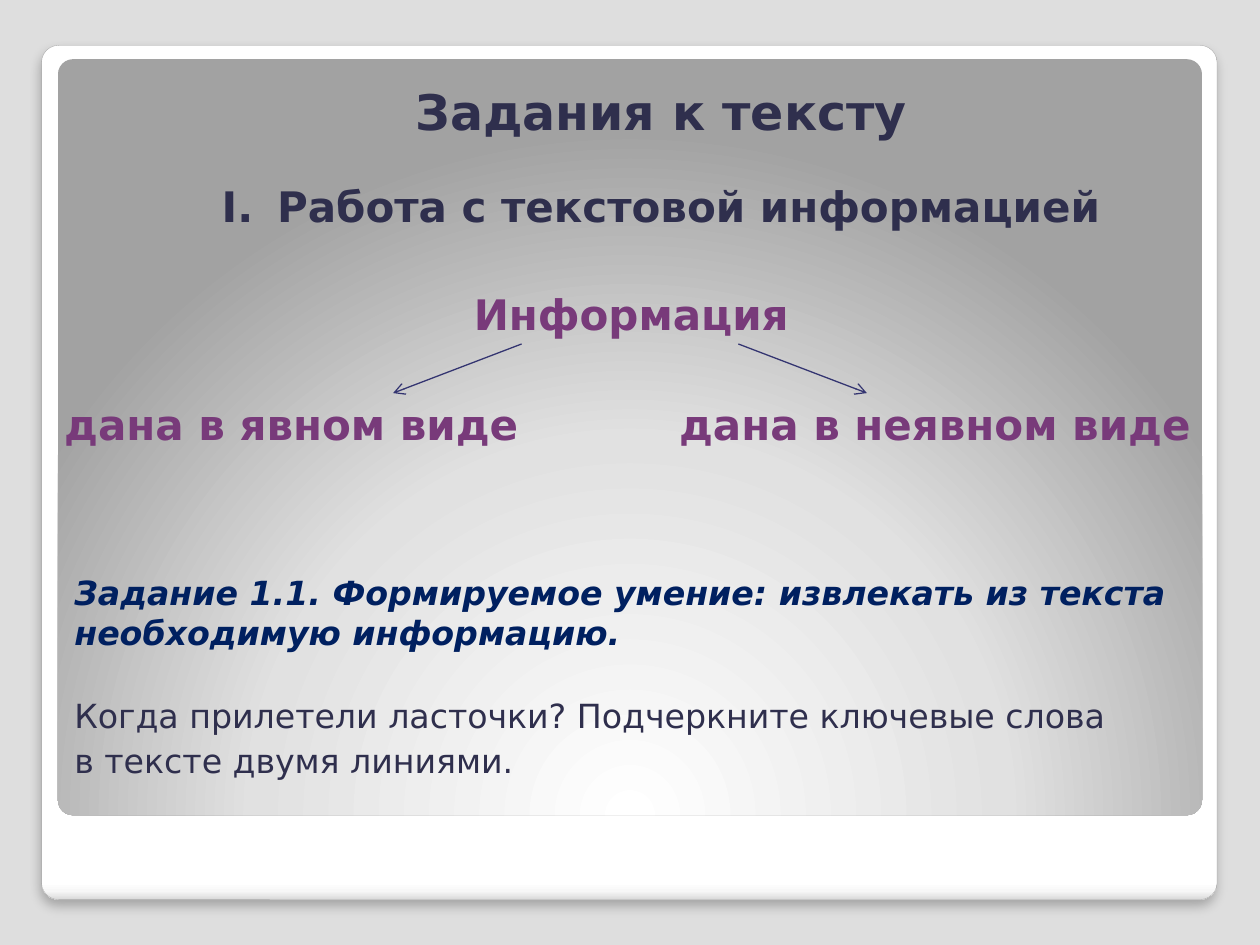
import lxml.etree
import pptx
import pptx.dml.color
import pptx.enum.shapes
import pptx.enum.text
import pptx.oxml
import pptx.oxml.ns
import pptx.util

Inches = pptx.util.Inches
Pt = pptx.util.Pt
RGBColor = pptx.dml.color.RGBColor
Align = pptx.enum.text.PP_ALIGN

FONT = "DejaVu Sans"
BACKGROUND = RGBColor(0xDE, 0xDE, 0xDE)
FRAME_LINE = RGBColor(0xA4, 0xA4, 0xA4)
WHITE = RGBColor(0xFF, 0xFF, 0xFF)
FRAME_FADE = RGBColor(0xF7, 0xF7, 0xF7)
FRAME_EDGE = RGBColor(0xDA, 0xDA, 0xDA)
PANEL_MIDDLE = RGBColor(0xE1, 0xE1, 0xE1)
PANEL_EDGE = RGBColor(0xA2, 0xA2, 0xA2)
INK = RGBColor(0x2F, 0x2F, 0x4D)
PURPLE = RGBColor(0x78, 0x3A, 0x7A)
NAVY = RGBColor(0x00, 0x20, 0x60)
ARROW = RGBColor(0x34, 0x35, 0x71)

FRAME_DIRECTION = '<a:lin ang="5400000" scaled="0"/>'
PANEL_DIRECTION = (
    '<a:path path="circle"><a:fillToRect l="50000" t="175000" '
    'r="50000" b="-75000"/></a:path>'
)
FRAME_SHADOW = (
    '<a:outerShdw {} blurRad="76200" dist="50800" dir="5400000" '
    'algn="t" rotWithShape="0"><a:srgbClr val="000000">'
    '<a:alpha val="25000"/></a:srgbClr></a:outerShdw>'
)


def add_child(parent, tag, **attributes):
    child = lxml.etree.SubElement(parent, pptx.oxml.ns.qn(tag))
    for name, value in attributes.items():
        child.set(name, str(value))
    return child


def add_panel(slide, box, stops, direction):
    shape = slide.shapes.add_shape(
        pptx.enum.shapes.MSO_SHAPE.ROUNDED_RECTANGLE, *map(Inches, box)
    )
    shape.adjustments[0] = 0.02
    shape.shadow.inherit = False
    shape.line.fill.background()
    stop_xml = "".join(
        f'<a:gs pos="{position * 1000}"><a:srgbClr val="{color}"/></a:gs>'
        for position, color in stops
    )
    gradient = pptx.oxml.parse_xml(
        f'<a:gradFill {pptx.oxml.ns.nsdecls("a")} rotWithShape="1">'
        f"<a:gsLst>{stop_xml}</a:gsLst>{direction}</a:gradFill>"
    )
    geometry = shape._element.spPr.find(pptx.oxml.ns.qn("a:prstGeom"))
    geometry.addnext(gradient)
    return shape


def add_frame(slide):
    stops = [(0, WHITE), (98, WHITE), (99, FRAME_FADE), (100, FRAME_EDGE)]
    shape = add_panel(slide, (0.33, 0.36, 9.33, 6.78), stops, FRAME_DIRECTION)
    shape.line.color.rgb = FRAME_LINE
    shape.line.width = Pt(0.16)
    effects = shape._element.spPr.find(pptx.oxml.ns.qn("a:effectLst"))
    effects.append(
        pptx.oxml.parse_xml(FRAME_SHADOW.format(pptx.oxml.ns.nsdecls("a")))
    )


def add_text_frame(slide, left, top, width, height):
    box = slide.shapes.add_textbox(*map(Inches, (left, top, width, height)))
    frame = box.text_frame
    frame.word_wrap = True
    frame.margin_left = Inches(0.2)
    frame.margin_top = frame.margin_right = Inches(0.1)
    frame.margin_bottom = Inches(0.05)
    return frame


def write(frame, text, size=24, color=INK, bold=True, italic=False,
          align=Align.LEFT, before=0, numbering=None, tab=None):
    paragraph = frame.paragraphs[0]
    if paragraph.runs:
        paragraph = frame.add_paragraph()
    paragraph.alignment = align
    paragraph.space_before = Pt(before)
    run = paragraph.add_run()
    run.text = text
    font = run.font
    font.name, font.size, font.bold, font.italic = FONT, Pt(size), bold, italic
    font.color.rgb = color
    properties = paragraph._p.get_or_add_pPr()
    if numbering:
        properties.set("marL", str(Inches(0.44)))
        properties.set("indent", str(-Inches(0.44)))
        add_child(properties, "a:buFont", typeface=FONT)
        add_child(properties, "a:buAutoNum", type=numbering)
    if tab:
        tabs = add_child(properties, "a:tabLst")
        add_child(tabs, "a:tab", pos=Inches(tab), algn="l")


def add_arrow(slide, start, end):
    connector = slide.shapes.add_connector(
        pptx.enum.shapes.MSO_CONNECTOR.STRAIGHT, *map(Inches, start + end)
    )
    connector.line.color.rgb = ARROW
    connector.line.width = Pt(0.75)
    add_child(connector.line._get_or_add_ln(), "a:tailEnd", type="arrow")
    add_child(connector._element.spPr, "a:effectLst")


def main():
    presentation = pptx.Presentation()
    presentation.slide_width = Inches(10)
    presentation.slide_height = Inches(7.5)
    slide = presentation.slides.add_slide(presentation.slide_layouts[6])
    slide.background.fill.solid()
    slide.background.fill.fore_color.rgb = BACKGROUND

    add_frame(slide)
    stops = [(0, WHITE), (55, PANEL_MIDDLE), (100, PANEL_EDGE)]
    add_panel(slide, (0.46, 0.47, 9.08, 6), stops, PANEL_DIRECTION)

    title = add_text_frame(slide, 0.39, 0.55, 9.61, 0.7)
    write(title, "Задания к тексту", size=28, align=Align.CENTER, before=2.5)

    section = add_text_frame(slide, 0.39, 1.33, 9.61, 0.7)
    write(section, "Работа с текстовой информацией", align=Align.CENTER,
          numbering="romanUcPeriod")

    scheme = add_text_frame(slide, 0.31, 2.19, 9.3, 1.56)
    write(scheme, "Информация", color=PURPLE, align=Align.CENTER, before=2.5)
    write(scheme, "дана в явном виде\tдана в неявном виде", color=PURPLE,
          before=34, tab=4.88)

    for side in (-1, 1):
        add_arrow(slide, (5 + side * 0.86, 2.73), (5 + side * 1.88, 3.12))

    task = add_text_frame(slide, 0.39, 4.44, 9.61, 1.97)
    write(task, "Задание 1.1. Формируемое умение: извлекать из текста "
          "необходимую информацию.", size=19, color=NAVY, italic=True)
    write(task, "Когда прилетели ласточки? Подчеркните ключевые слова",
          size=19, bold=False, before=25)
    write(task, "в тексте двумя линиями.", size=19, bold=False, before=2.5)

    presentation.save("out.pptx")


if __name__ == "__main__":
    main()
